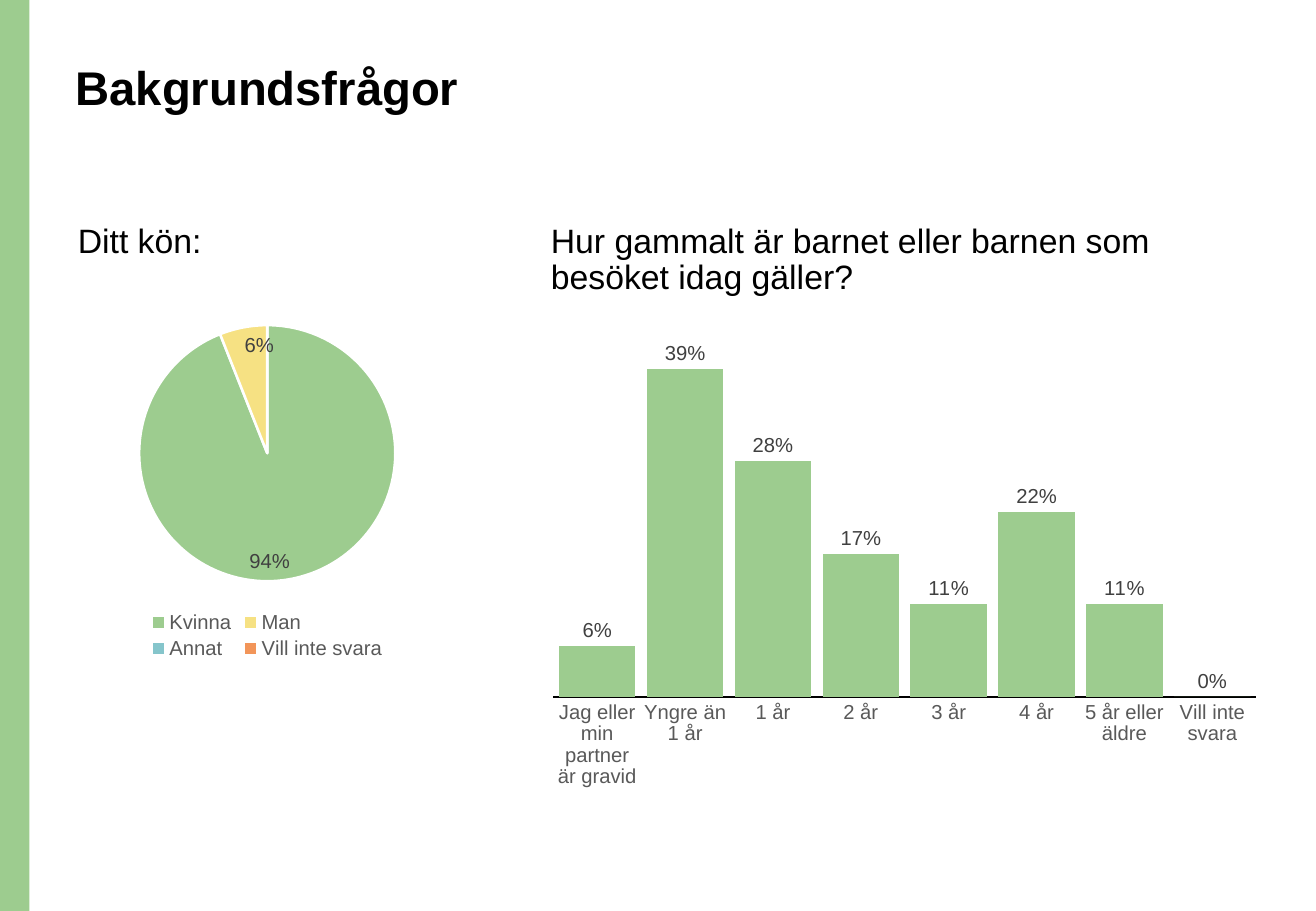
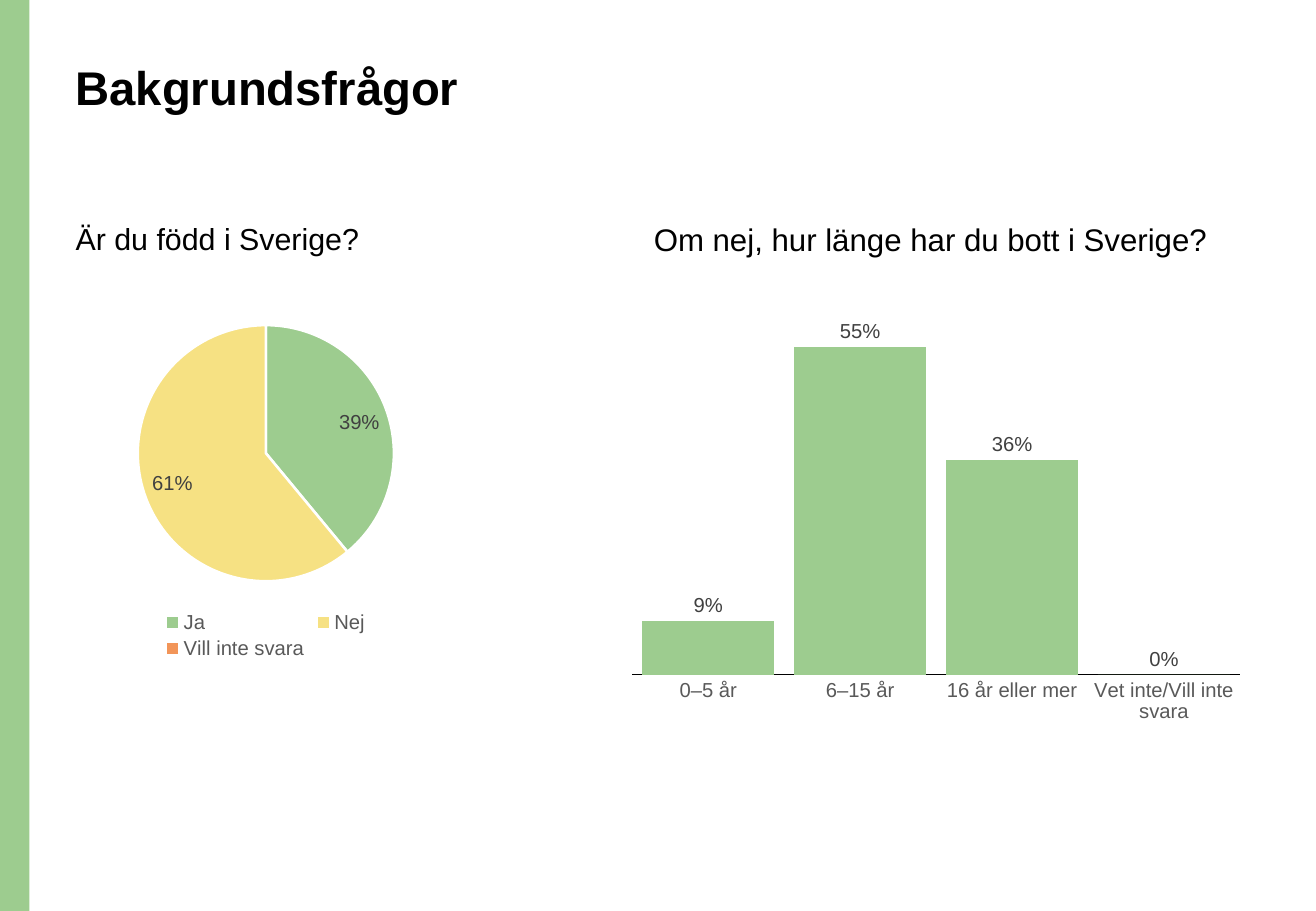
import pptx
import pptx.util
import pptx.chart.data
import pptx.dml.color
import pptx.enum.chart
import pptx.enum.shapes
import pptx.enum.text

Pt = pptx.util.Pt
XL = pptx.enum.chart
COLORS = {
    "green": "9DCC8F",
    "yellow": "F6E183",
    "blue": "85C5CB",
    "orange": "F29559",
    "black": "000000",
    "white": "FFFFFF",
    "label": "404040",
    "axis": "595959",
}
CHART_TOP = 182.8
HEADING_TOP = 129.2


def rgb(name):
    return pptx.dml.color.RGBColor.from_string(COLORS[name])


def apply(obj, values):
    for name, value in values.items():
        setattr(obj, name, value)


class Deck:
    def __init__(self):
        self.prs = pptx.Presentation()
        self.prs.slide_width, self.prs.slide_height = Pt(780), Pt(540)
        self.s = None

    def font(self, font, size, color="black", bold=False):
        apply(font, {"name": "Arial", "size": Pt(size), "bold": bold})
        font.color.rgb = rgb(color)

    def band(self):
        sp = self.s.shapes.add_shape(
            pptx.enum.shapes.MSO_SHAPE.RECTANGLE, 0, 0, Pt(17.5), self.prs.slide_height)
        sp.shadow.inherit = False
        sp.fill.solid()
        sp.fill.fore_color.rgb = rgb("green")
        sp.line.fill.background()

    def slide(self, title):
        self.s = self.prs.slides.add_slide(self.prs.slide_layouts[4])
        for sp in list(self.s.placeholders):
            if sp.placeholder_format.idx in (2, 4):
                sp.element.getparent().remove(sp.element)
        self.band()
        self.text(0, title, (37.6, 34.6, 672.5, 73.4), 28, bold=True, before=0)

    def text(self, idx, text, box, size, bold=False, before=10):
        sp = self.s.placeholders[idx]
        apply(sp, dict(zip(("left", "top", "width", "height"), map(Pt, box))))
        tf = sp.text_frame
        apply(tf, {
            "word_wrap": True,
            "auto_size": pptx.enum.text.MSO_AUTO_SIZE.NONE,
            "vertical_anchor": pptx.enum.text.MSO_ANCHOR.TOP,
        })
        p = tf.paragraphs[0]
        apply(p, {
            "alignment": pptx.enum.text.PP_ALIGN.LEFT,
            "line_spacing": 0.9,
            "space_before": Pt(before),
        })
        r = p.add_run()
        r.text = text
        self.font(r.font, size, bold=bold)

    def chart(self, kind, box, values, position, number_format):
        data = pptx.chart.data.CategoryChartData(number_format="0%")
        data.categories = list(values)
        data.add_series("Series 1", list(values.values()))
        chart = self.s.shapes.add_chart(kind, *map(Pt, box), data).chart
        apply(chart, {"has_title": False, "has_legend": False})
        self.font(chart.font, 10)
        plot = chart.plots[0]
        plot.has_data_labels = True
        labels = plot.data_labels
        apply(labels, {
            "show_value": True,
            "show_percentage": False,
            "position": position,
            "number_format": number_format,
            "number_format_is_linked": False,
        })
        self.font(labels.font, 12, "label")
        return chart, plot

    def pie(self, left, values, colors):
        chart, plot = self.chart(
            XL.XL_CHART_TYPE.PIE, (left, CHART_TOP, 240, 211), values,
            XL.XL_LABEL_POSITION.INSIDE_END, '[<0.01]"";[>0.01]0%')
        plot.vary_by_categories = True
        for i, color in enumerate(colors):
            fmt = plot.series[0].points[i].format
            fmt.fill.solid()
            fmt.fill.fore_color.rgb = rgb(color)
            fmt.line.color.rgb = rgb("white")
            fmt.line.width = Pt(1.5)
        chart.has_legend = True
        apply(chart.legend, {
            "position": XL.XL_LEGEND_POSITION.BOTTOM,
            "include_in_layout": False,
        })
        self.font(chart.legend.font, 12, "axis")

    def columns(self, left, width, height, values):
        chart, plot = self.chart(
            XL.XL_CHART_TYPE.COLUMN_CLUSTERED, (left, CHART_TOP, width, height), values,
            XL.XL_LABEL_POSITION.OUTSIDE_END, "0%")
        apply(plot, {"vary_by_categories": False, "gap_width": 15, "overlap": -27})
        fill = plot.series[0].format.fill
        fill.solid()
        fill.fore_color.rgb = rgb("green")
        apply(chart.value_axis, {
            "visible": False,
            "has_major_gridlines": False,
            "minimum_scale": 0,
        })
        axis = chart.category_axis
        apply(axis, {
            "major_tick_mark": XL.XL_TICK_MARK.NONE,
            "minor_tick_mark": XL.XL_TICK_MARK.NONE,
        })
        self.font(axis.tick_labels.font, 12, "axis")
        axis.format.line.color.rgb = rgb("black")
        axis.format.line.width = Pt(0.75)


def main():
    deck = Deck()

    deck.slide("Bakgrundsfrågor")
    deck.text(1, "Ditt kön:", (38.9, HEADING_TOP, 330, 33), 20)
    deck.text(3, "Hur gammalt är barnet eller barnen som besöket idag gäller?",
              (319.3, HEADING_TOP, 434, 53), 20)
    deck.pie(38.4, {"Kvinna": 0.94, "Man": 0.06, "Annat": 0, "Vill inte svara": 0},
             ("green", "yellow", "blue", "orange"))
    deck.columns(319.3, 434, 290, {
        "Jag eller min partner är gravid": 0.06,
        "Yngre än 1 år": 0.39,
        "1 år": 0.28,
        "2 år": 0.17,
        "3 år": 0.11,
        "4 år": 0.22,
        "5 år eller äldre": 0.11,
        "Vill inte svara": 0,
    })

    deck.slide("Bakgrundsfrågor")
    deck.text(1, "Är du född i Sverige?", (37.6, HEADING_TOP, 330, 33), 18)
    deck.text(3, "Om nej, hur länge har du bott i Sverige?",
              (380.3, HEADING_TOP, 362, 42), 18.5)
    deck.pie(37.6, {"Ja": 0.39, "Nej": 0.61, "Vill inte svara": 0},
             ("green", "yellow", "orange"))
    deck.columns(367.4, 375, 250.5, {
        "0–5 år": 0.09,
        "6–15 år": 0.55,
        "16 år eller mer": 0.36,
        "Vet inte/Vill inte svara": 0,
    })

    deck.prs.save("out.pptx")


if __name__ == "__main__":
    main()
